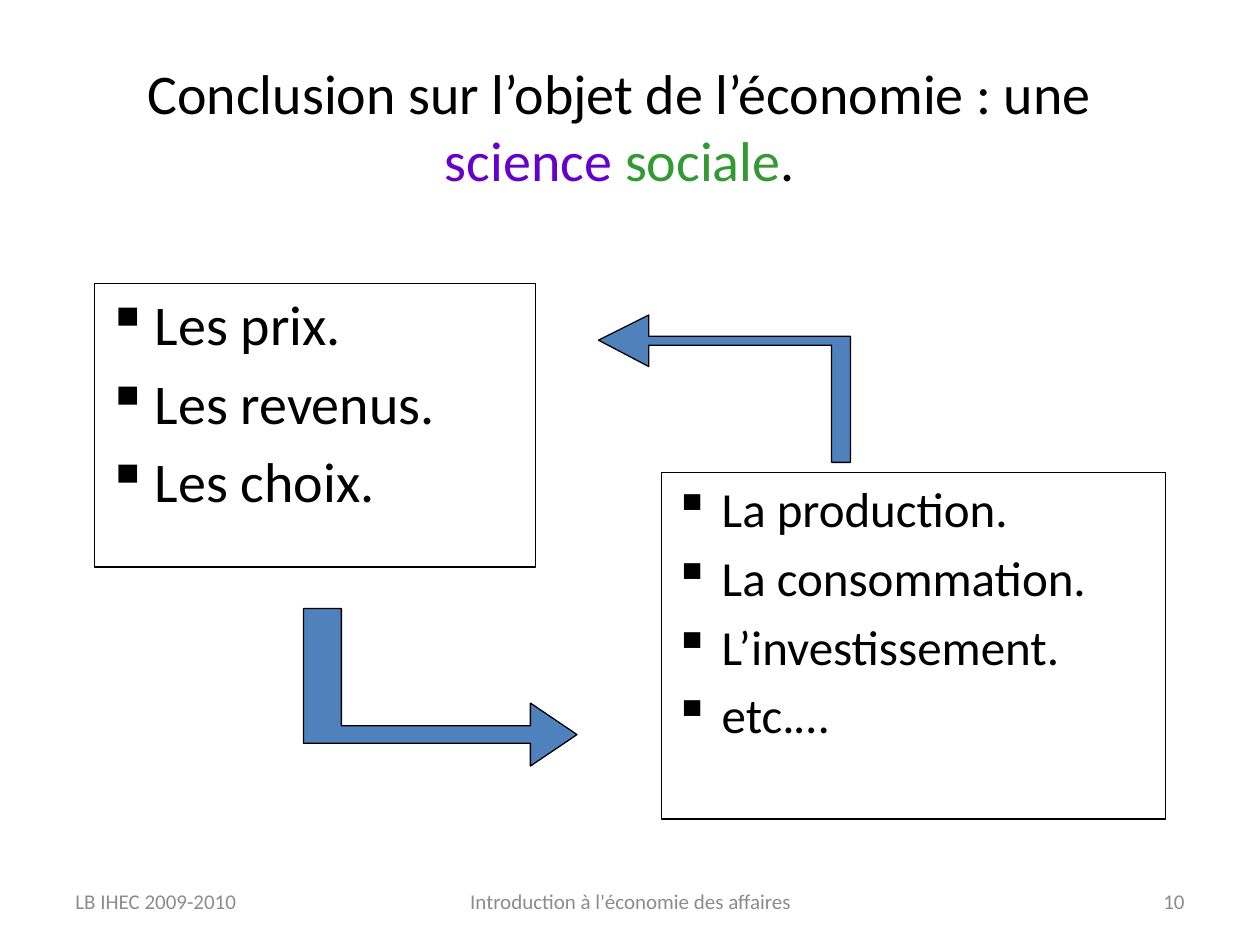
"""Builds the slide concluding that economics is a social science."""
import pptx
import pptx.util
import pptx.dml.color
import pptx.enum.shapes
import pptx.enum.text
import pptx.oxml.ns
from lxml import etree

Inches, Pt = pptx.util.Inches, pptx.util.Pt
ALIGN = pptx.enum.text.PP_ALIGN
ANCHOR = pptx.enum.text.MSO_ANCHOR
BLACK, GREY, BLUE = "000000", "8C8C8C", "4F81BD"

TITLE = [
    ("Conclusion sur l’objet de l’économie : une ", BLACK),
    ("science ", "6600CC"),
    ("sociale", "339933"),
    (".", BLACK),
]
LISTS = [
    ((0.75, 2.25, 3.5, 2.25), 32, ["Les prix.", "Les revenus.", "Les choix."]),
    ((5.25, 3.75, 4, 2.75), 28,
     ["La production.", "La consommation.", "L’investissement.", "etc.…"]),
]
ARROWS = [
    [(4.75, 2.7), (5.15, 2.91), (5.15, 2.74), (6.6, 2.74), (6.6, 3.67),
     (6.75, 3.67), (6.75, 2.67), (5.15, 2.67), (5.15, 2.5)],
    [(4.58, 5.83), (4.21, 5.58), (4.21, 5.76), (2.71, 5.76), (2.71, 4.83),
     (2.41, 4.83), (2.41, 5.9), (4.21, 5.9), (4.21, 6.08)],
]
FOOTERS = [
    ((7.17, 6.95, 2.33, 0.4), "10", ALIGN.RIGHT),
    ((3.42, 6.95, 3.17, 0.4), "Introduction à l'économie des affaires", ALIGN.CENTER),
    ((0.5, 6.95, 2.33, 0.4), "LB IHEC 2009-2010", ALIGN.LEFT),
]


def rgb(color):
    return pptx.dml.color.RGBColor.from_string(color)


def add_run(p, text, size, color):
    r = p.add_run()
    r.text = text
    r.font.name = "Calibri"
    r.font.size = Pt(size)
    r.font.color.rgb = rgb(color)


def outline(sp):
    sp.shadow.inherit = False
    sp.line.color.rgb = rgb(BLACK)
    sp.line.width = Pt(0.75)


def add_line(s, box, runs, size, align):
    tf = s.shapes.add_textbox(*map(Inches, box)).text_frame
    tf.word_wrap = True
    tf.vertical_anchor = ANCHOR.MIDDLE
    p = tf.paragraphs[0]
    p.alignment = align
    for text, color in runs:
        add_run(p, text, size, color)


def add_list(s, box, size, items):
    sp = s.shapes.add_shape(pptx.enum.shapes.MSO_SHAPE.RECTANGLE, *map(Inches, box))
    sp.fill.background()
    outline(sp)
    tf = sp.text_frame
    tf.word_wrap = True
    tf.vertical_anchor = ANCHOR.TOP
    for i, item in enumerate(items):
        p = tf.paragraphs[0] if i == 0 else tf.add_paragraph()
        p.alignment = ALIGN.LEFT
        p.space_before = Pt(size * 0.2)
        pPr = p._p.get_or_add_pPr()
        pPr.set("marL", str(Inches(0.38)))
        pPr.set("indent", str(-Inches(0.38)))
        etree.SubElement(pPr, pptx.oxml.ns.qn("a:buChar")).set("char", "▪")
        add_run(p, item, size, BLACK)


def add_arrow(s, points):
    start, *rest = [(Inches(x), Inches(y)) for x, y in points]
    fb = s.shapes.build_freeform(*start)
    fb.add_line_segments(rest, close=True)
    sp = fb.convert_to_shape()
    sp.fill.solid()
    sp.fill.fore_color.rgb = rgb(BLUE)
    outline(sp)


def main():
    prs = pptx.Presentation()
    prs.slide_width, prs.slide_height = Inches(10), Inches(7.5)
    s = prs.slides.add_slide(prs.slide_layouts[6])
    add_line(s, (0.67, 0.33, 8.5, 1.33), TITLE, 32, ALIGN.CENTER)
    for box, size, items in LISTS:
        add_list(s, box, size, items)
    for points in ARROWS:
        add_arrow(s, points)
    for box, text, align in FOOTERS:
        add_line(s, box, [(text, GREY)], 12, align)
    prs.save("out.pptx")


if __name__ == "__main__":
    main()
